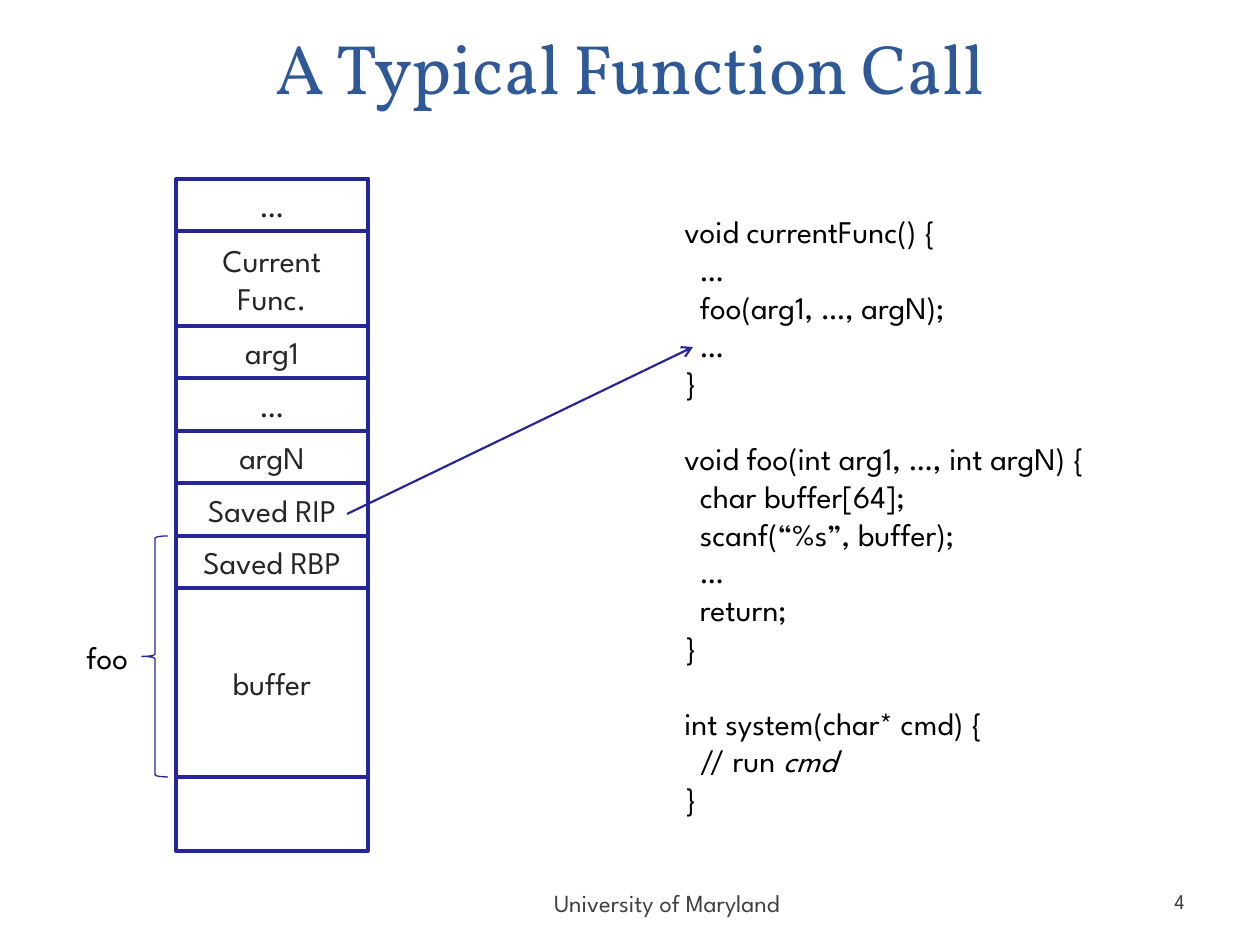
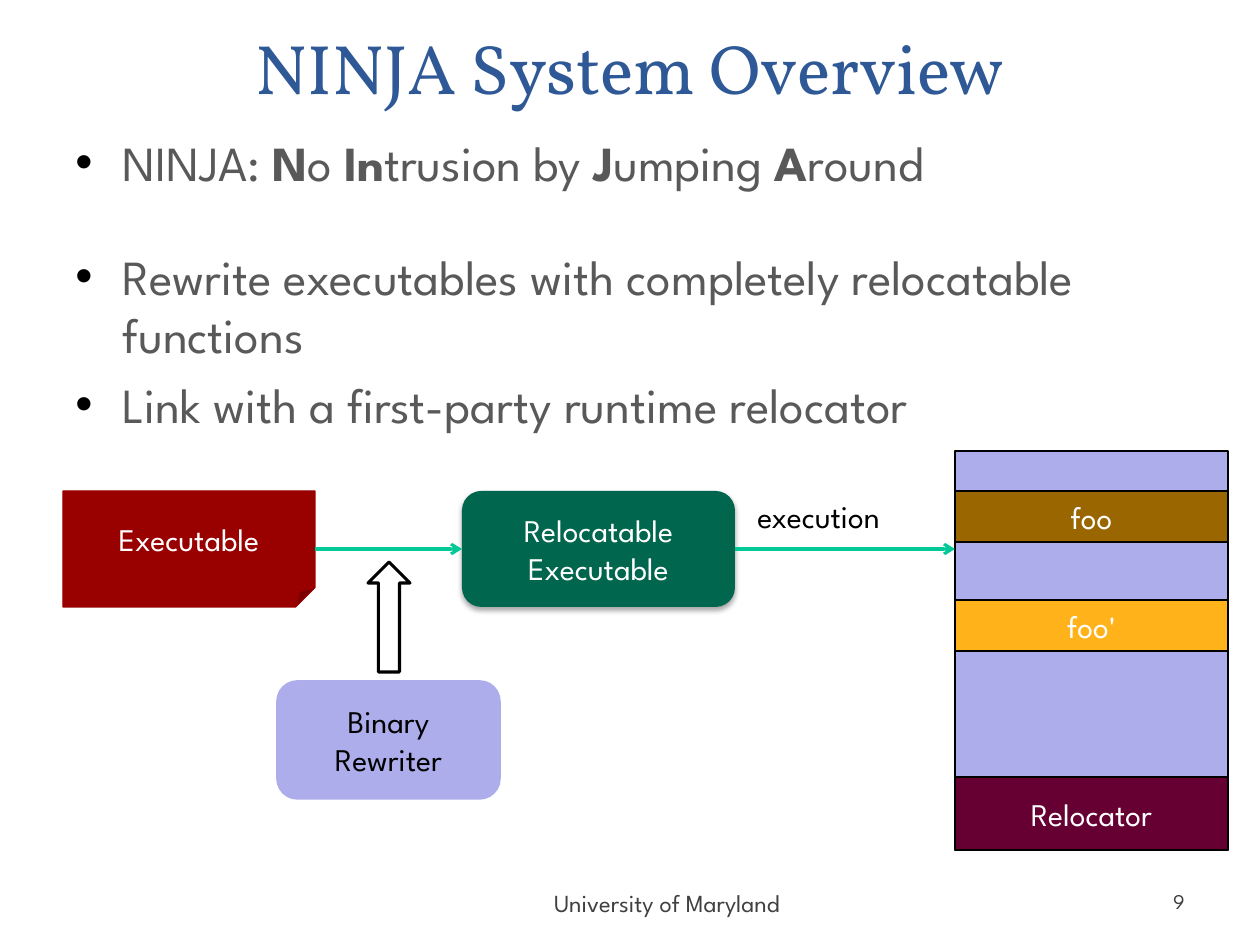
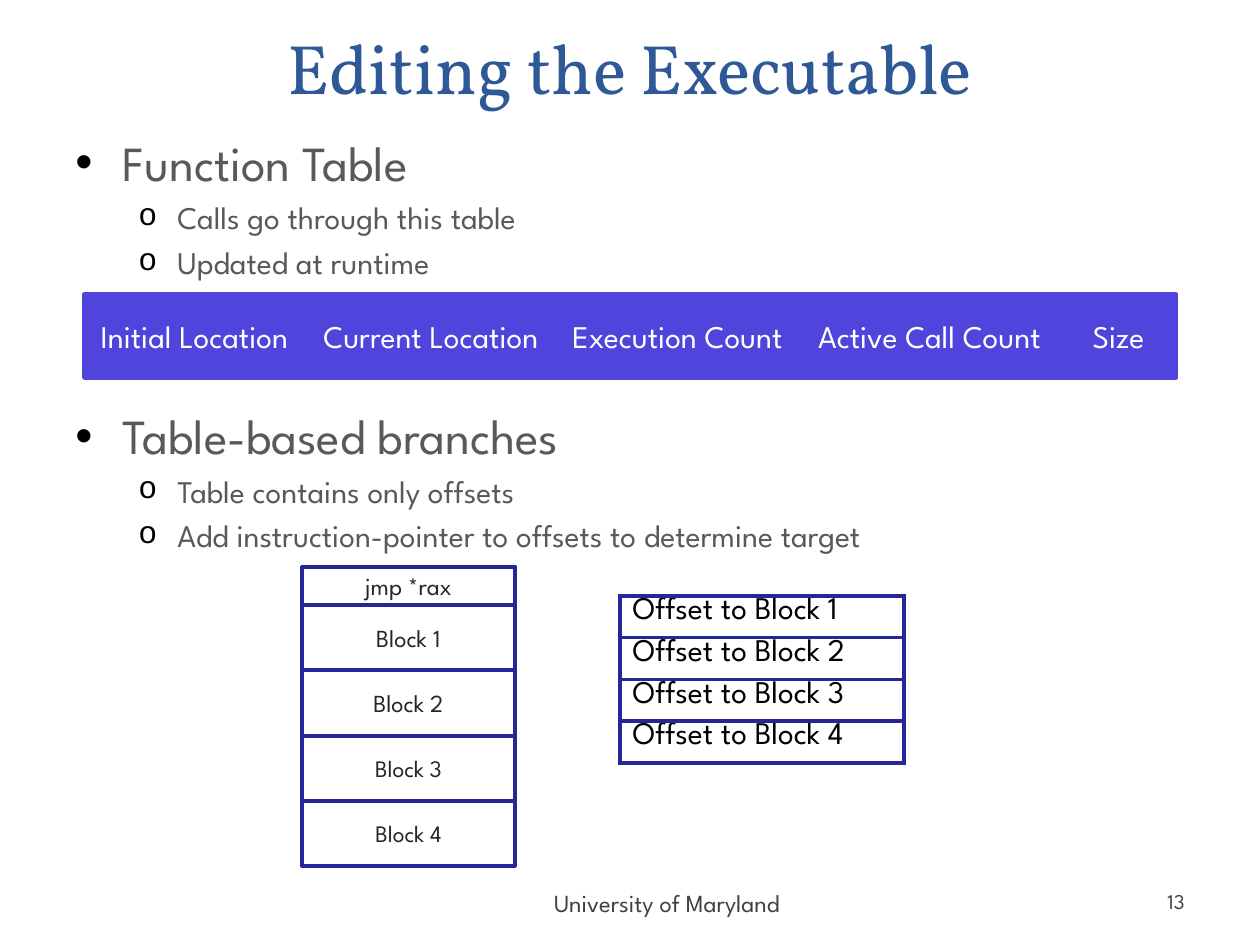
from lxml.etree import SubElement
from pptx import Presentation
from pptx.dml.color import RGBColor
from pptx.enum.shapes import MSO_CONNECTOR, MSO_SHAPE
from pptx.enum.text import MSO_ANCHOR, MSO_AUTO_SIZE, PP_ALIGN
from pptx.oxml.ns import qn
from pptx.util import Emu, Pt

PX = 914400 / 126
FONT = "League Spartan"
HEAD = "Vollkorn"
BLACK = RGBColor(0x00, 0x00, 0x00)
WHITE = RGBColor(0xFF, 0xFF, 0xFF)
DARK = RGBColor(0x26, 0x26, 0x26)
SLATE = RGBColor(0x40, 0x40, 0x40)
GREY = RGBColor(0x59, 0x59, 0x59)
BLUE = RGBColor(0x2F, 0x58, 0x97)
NAVY = RGBColor(0x26, 0x26, 0x99)
INDIGO = RGBColor(0x4F, 0x44, 0xDC)
LILAC = RGBColor(0xAD, 0xAD, 0xEB)
RED = RGBColor(0x99, 0x00, 0x00)
GREEN = RGBColor(0x00, 0x66, 0x4D)
TEAL = RGBColor(0x00, 0xC8, 0x96)
BROWN = RGBColor(0x99, 0x66, 0x00)
AMBER = RGBColor(0xFF, 0xB2, 0x19)
WINE = RGBColor(0x66, 0x00, 0x33)
RECT = MSO_SHAPE.RECTANGLE
ROUND = MSO_SHAPE.ROUNDED_RECTANGLE
LEFT, CENTER, RIGHT = PP_ALIGN.LEFT, PP_ALIGN.CENTER, PP_ALIGN.RIGHT
TOP, MIDDLE, BOTTOM = MSO_ANCHOR.TOP, MSO_ANCHOR.MIDDLE, MSO_ANCHOR.BOTTOM


def write(shape, text, size, tint, align=LEFT, anchor=TOP, face=FONT, mark="bold"):
    frame = shape.text_frame
    frame.word_wrap = True
    frame.auto_size = MSO_AUTO_SIZE.NONE
    frame.vertical_anchor = anchor
    for n, line in enumerate(text.split("\n")):
        para = frame.add_paragraph() if n else frame.paragraphs[0]
        para.alignment = align
        for k, part in enumerate(line.split("|")):
            run = para.add_run()
            run.text = part
            if k % 2:
                setattr(run.font, mark, True)
        para.font.name = face
        para.font.size = Pt(size)
        para.font.color.rgb = tint
    return frame


def box(page, kind, area, text="", fill=None, line=None, width=2, tint=DARK, size=18):
    shape = page.shapes.add_shape(kind, *[Emu(round(v * PX)) for v in area])
    shape.shadow.inherit = False
    if fill is None:
        shape.fill.background()
    else:
        shape.fill.solid()
        shape.fill.fore_color.rgb = fill
    if line is None:
        shape.line.fill.background()
    else:
        shape.line.color.rgb = line
        shape.line.width = Pt(width)
    if text:
        write(shape, text, size, tint, CENTER, MIDDLE)
    return shape


deck = Presentation()
deck.slide_width = Emu(round(1260 * PX))
deck.slide_height = Emu(round(945 * PX))

pages = []
for title in ["A Typical Function Call", "NINJA System Overview", "Editing the Executable"]:
    page = deck.slides.add_slide(deck.slide_layouts[5])
    pages.append(page)
    head = page.shapes.title
    head.left, head.top, head.width, head.height = [
        Emu(round(v * PX)) for v in (63, 0, 1134, 115)
    ]
    frame = write(head, title, 40, BLUE, CENTER, BOTTOM, HEAD)
    frame.paragraphs[0].line_spacing = Pt(57.9)
call, system, edit = pages

CODE = """void currentFunc() {
  …
  foo(arg1, …, argN);
  …
}
void foo(int arg1, …, int argN) {
  char buffer[64];
  scanf(“%s”, buffer);
  …
  return;
}
int system(char* cmd) {
  // run |cmd|
}"""

labels = [
    (call, (672, 206, 504, 624), CODE, 18, BLACK, LEFT, TOP),
    (call, (74, 632, 68, 50), "foo", 18, BLACK, LEFT, TOP),
    (system, (745, 491, 180, 50), "execution", 18, BLACK, LEFT, TOP),
]
for page, number in zip(pages, ["4", "9", "13"]):
    labels += [
        (page, (471, 871, 392, 63), "University of Maryland", 14, SLATE, CENTER, MIDDLE),
        (page, (903, 876, 294, 50), number, 12, SLATE, RIGHT, MIDDLE),
    ]
for page, area, text, size, tint, align, anchor in labels:
    label = page.shapes.add_textbox(*[Emu(round(v * PX)) for v in area])
    frame = write(label, text, size, tint, align, anchor, mark="italic")
    if text == CODE:
        for n in (5, 11):
            frame.paragraphs[n].space_before = Pt(21.6)

lists = [
    (system, 336, [
        ("NINJA: |N|o |In|trusion by |J|umping |A|round", 0, 0),
        ("Rewrite executables with completely relocatable functions", 0, 31.5),
        ("Link with a first-party runtime relocator", 0, 6),
    ]),
    (edit, 431, [
        ("Function Table", 0, 0),
        ("Calls go through this table", 1, 4),
        ("Updated at runtime", 1, 4),
        ("Table-based branches", 0, 71.5),
        ("Table contains only offsets", 1, 4),
        ("Add instruction-pointer to offsets to determine target", 1, 4),
    ]),
]
levels = [(47, 47, "•", "Arial", 28), (102, 39, "o", "Courier New", 18)]
for page, height, items in lists:
    body = page.shapes.add_textbox(*[Emu(round(v * PX)) for v in (63, 126, 1134, height)])
    frame = write(body, "\n".join(item[0] for item in items), 28, GREY)
    for para, (text, level, gap) in zip(frame.paragraphs, items):
        margin, hang, sign, face, size = levels[level]
        props = para._p.get_or_add_pPr()
        props.set("marL", str(round(margin * PX)))
        props.set("indent", str(round(-hang * PX)))
        para.level = level
        marks = [props.makeelement(qn("a:" + tag), {}) for tag in ("buClr", "buFont", "buChar")]
        SubElement(marks[0], qn("a:srgbClr"), val=str(BLACK))
        marks[1].set("typeface", face)
        marks[2].set("char", sign)
        for n, mark in enumerate(marks):
            props.insert(n, mark)
        if gap:
            para.space_before = Pt(gap)
        para.font.size = Pt(size)

stacks = [
    (call, 176, 179, 192, 672, None, [
        ("…", 52, 18), ("Current\nFunc.", 95, 18), ("arg1", 52, 18), ("…", 53, 18),
        ("argN", 52, 18), ("Saved RIP", 53, 18), ("Saved RBP", 52, 18), ("buffer", 189, 18),
    ]),
    (edit, 302, 567, 213, 290, WHITE, [
        ("jmp *rax", 38, 14), ("Block 1", 65, 14), ("Block 2", 66, 14),
        ("Block 3", 65, 13.5), ("Block 4", 65, 13.5),
    ]),
]
for page, x, y, wide, tall, fill, rows in stacks:
    box(page, RECT, (x, y, wide, tall), fill=fill, line=NAVY)
    for text, high, size in rows:
        box(page, RECT, (x, y, wide, high), text, fill, NAVY, size=size)
        y += high
box(call, MSO_SHAPE.LEFT_BRACE, (142, 536, 26, 241), line=NAVY, width=0.75)

source = box(system, MSO_SHAPE.FOLDED_CORNER, (63, 491, 252, 116), "Executable", RED, RED, 0.75, WHITE)
target = box(system, ROUND, (462, 491, 273, 116), "Relocatable Executable", GREEN, tint=WHITE)
glow = SubElement(
    target._element.spPr.find(qn("a:effectLst")), qn("a:outerShdw"),
    blurRad=str(Pt(3.1)), dist=str(Pt(1.8)), dir="5400000", rotWithShape="0",
)
shade = SubElement(glow, qn("a:srgbClr"), val=str(BLACK))
SubElement(shade, qn("a:alpha"), val="35000")
box(system, ROUND, (278, 682, 221, 116), "Binary Rewriter", LILAC, LILAC, tint=BLACK)
box(system, MSO_SHAPE.UP_ARROW, (368, 562, 42, 110), fill=WHITE, line=BLACK, width=1.75)
for text, y, high, fill in [
    ("", 451, 399, LILAC),
    ("foo", 491, 51, BROWN),
    ("foo'", 600, 51, AMBER),
    ("Relocator", 777, 73, WINE),
]:
    box(system, RECT, (955, y, 273, high), text, fill, BLACK, 0.75, WHITE)

for page, ends, tint, width, start, stop in [
    (call, (347, 514, 693, 347), NAVY, 1.25, None, None),
    (system, (315, 549, 462, 549), TEAL, 1.75, source, target),
    (system, (735, 549, 955, 549), TEAL, 1.75, target, None),
]:
    arrow = page.shapes.add_connector(MSO_CONNECTOR.STRAIGHT, *[Emu(round(v * PX)) for v in ends])
    arrow.line.color.rgb = tint
    arrow.line.width = Pt(width)
    SubElement(arrow.line._get_or_add_ln(), qn("a:tailEnd"), type="arrow")
    SubElement(arrow._element.spPr, qn("a:effectLst"))
    if start:
        arrow.begin_connect(start, 3)
    if stop:
        arrow.end_connect(stop, 1)

x = 84
for text, wide in [
    ("Initial Location", 221), ("Current Location", 252), ("Execution Count", 241),
    ("Active Call Count", 263), ("Size", 115),
]:
    box(edit, RECT, (x, 294, wide, 84), text, INDIGO, INDIGO, tint=WHITE)
    x += wide

grid = edit.shapes.add_table(4, 1, *[Emu(round(v * PX)) for v in (620, 596, 284, 167)]).table
grid.first_row = False
grid.horz_banding = False
for n in range(4):
    cell = grid.cell(n, 0)
    props = cell._tc.get_or_add_tcPr()
    for side in ("lnL", "lnR", "lnT", "lnB"):
        edge = SubElement(props, qn("a:" + side), w=str(Pt(2.25)))
        paint = SubElement(edge, qn("a:solidFill"))
        SubElement(paint, qn("a:srgbClr"), val=str(NAVY))
    cell.fill.background()
    cell.margin_top = cell.margin_bottom = Pt(1)
    cell.text = f"Offset to Block {n + 1}"
    para = cell.text_frame.paragraphs[0]
    para.font.name = FONT
    para.font.size = Pt(18)
    para.font.color.rgb = BLACK

deck.save("out.pptx")
